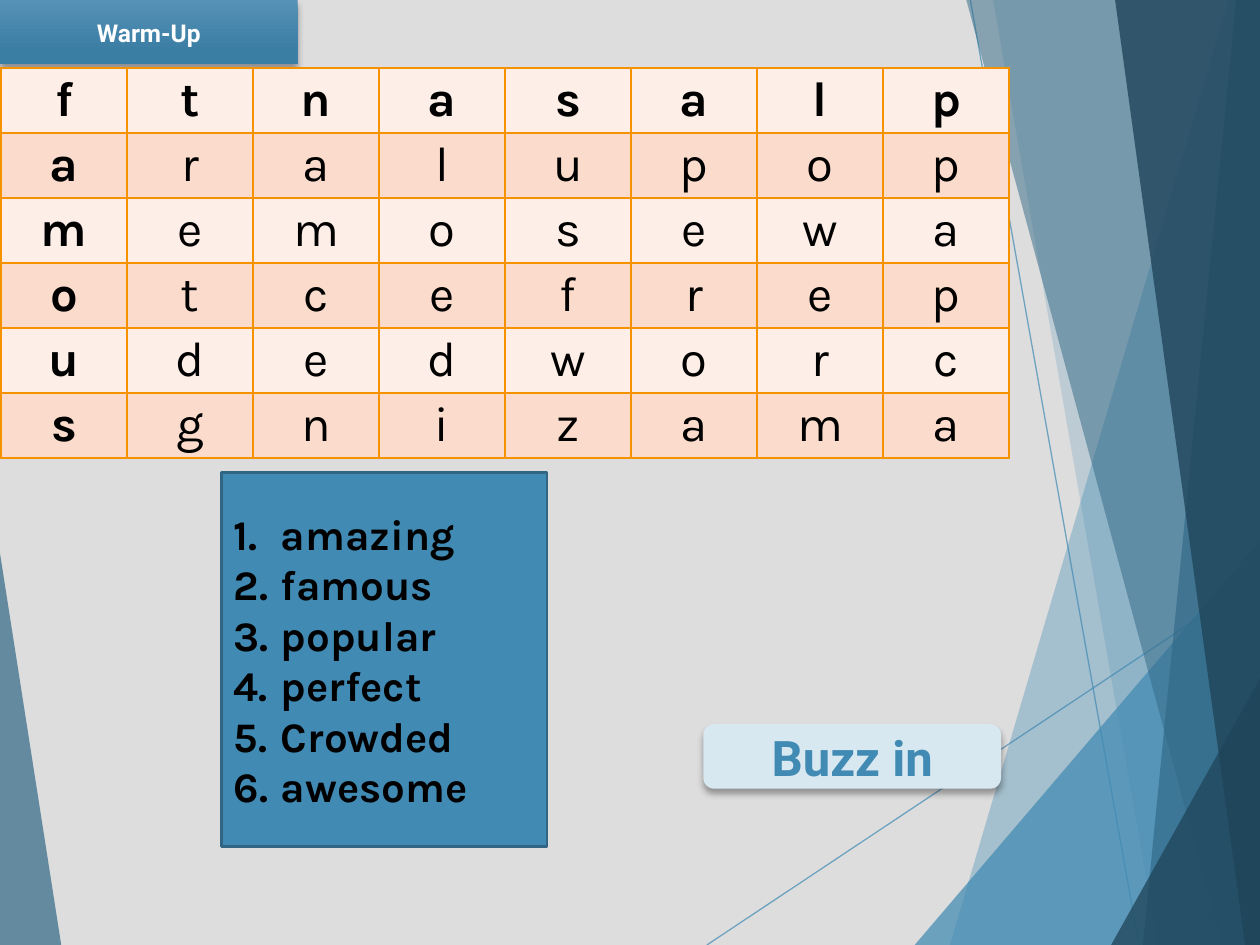
from lxml.etree import SubElement
from pptx import Presentation
from pptx.dml.color import RGBColor
from pptx.enum.shapes import MSO_CONNECTOR, MSO_SHAPE
from pptx.enum.text import MSO_ANCHOR, MSO_AUTO_SIZE, PP_ALIGN
from pptx.oxml import parse_xml
from pptx.oxml.ns import nsdecls, qn
from pptx.util import Cm, Pt

BLUE = RGBColor(0x41, 0x8A, 0xB3)
STEEL = RGBColor(0x31, 0x68, 0x86)
NAVY = RGBColor(0x20, 0x45, 0x5A)
BOX_LINE = RGBColor(0x30, 0x66, 0x84)
GRADIENT = [(0, RGBColor(0x56, 0x91, 0xB7)), (0.78, RGBColor(0x3B, 0x7E, 0xA4))]
PALE_BLUE = RGBColor(0xD8, 0xE8, 0xF1)
BANDS = [RGBColor(0xFD, 0xEE, 0xE7), RGBColor(0xFB, 0xDC, 0xCC)]
ORANGE = RGBColor(0xF6, 0x92, 0x00)
GREY = RGBColor(0xDD, 0xDD, 0xDD)
BLACK = RGBColor(0, 0, 0)
WHITE = RGBColor(0xFF, 0xFF, 0xFF)

RAYS = [(14.25, 19.05, 25.43, 11.61), (19.56, 0, 22.96, 19.05)]
FACETS = [
    (BLUE, 36, [(24.77, 0), (19.15, 19.05), (25.45, 19.08), (25.43, 0)]),
    (BLUE, 20, [(20.02, 0), (23.34, 19.05), (25.43, 19.05), (25.43, 0)]),
    (BLUE, 72, [(18.44, 19.05), (25.4, 10.9), (25.43, 19.05)]),
    (STEEL, 50, [(19.48, 0), (24.64, 19.05), (25.43, 19.05), (25.43, 0)]),
    (STEEL, 66, [(24.92, 0), (23.04, 19.05), (25.43, 19.05), (25.4, 0)]),
    (NAVY, 80, [(22.48, 0), (25.1, 19.05), (25.45, 19.05), (25.4, 0)]),
    (NAVY, 76, [(22.4, 19.05), (25.45, 13.59), (25.45, 19.05)]),
    (STEEL, 70, [(0, 11.15), (1.24, 19.08), (0, 19.05)]),
]
LETTERS = ["ftnasalp", "aralupop", "memosewa", "otcefrep", "udedworc", "sgnizama"]
WORDS = ["amazing", "famous", "popular", "perfect", "Crowded", "awesome"]


def set_all(obj, fmt):
    for name, value in fmt.items():
        setattr(obj, name, value)


def set_font(font, size, name, color, bold=True):
    set_all(font, {"size": Pt(size), "name": name, "bold": bold})
    font.color.rgb = color


def place(sp, left, top, width, height):
    set_all(sp, {"left": Cm(left), "top": Cm(top), "width": Cm(width), "height": Cm(height)})


def set_alpha(fmt_element, percent):
    for clr in fmt_element.iter(qn("a:srgbClr")):
        SubElement(clr, qn("a:alpha"), val=str(percent * 1000))


def add_ray(s, x1, y1, x2, y2):
    ray = s.shapes.add_connector(MSO_CONNECTOR.STRAIGHT, Cm(x1), Cm(y1), Cm(x2), Cm(y2))
    ray.line.width = Pt(0.75)
    ray.line.color.rgb = BLUE
    spPr = ray._element.spPr
    set_alpha(spPr, 70)
    SubElement(spPr, qn("a:effectLst"))


def add_facet(s, color, opacity, points):
    corners = [(Cm(x), Cm(y)) for x, y in points]
    builder = s.shapes.build_freeform(*corners[0])
    builder.add_line_segments(corners[1:], close=True)
    sp = builder.convert_to_shape()
    sp.shadow.inherit = False
    sp.fill.solid()
    sp.fill.fore_color.rgb = color
    sp.line.fill.background()
    set_alpha(sp._element.spPr, opacity)


def add_drop_shadow(sp):
    sp.shadow.inherit = False
    effects = sp._element.spPr.find(qn("a:effectLst"))
    effects.append(parse_xml(
        f'<a:outerShdw {nsdecls("a")} blurRad="{Pt(4)}" dist="{Pt(3)}" dir="5400000" '
        'rotWithShape="0"><a:srgbClr val="000000"><a:alpha val="35000"/></a:srgbClr></a:outerShdw>'))


def format_button(sp, text, size, color):
    sp.line.fill.background()
    add_drop_shadow(sp)
    tf = sp.text_frame
    set_all(tf, {"text": text, "vertical_anchor": MSO_ANCHOR.MIDDLE,
                 "auto_size": MSO_AUTO_SIZE.NONE, "word_wrap": True})
    p = tf.paragraphs[0]
    p.alignment = PP_ALIGN.CENTER
    set_font(p.runs[0].font, size, "Roboto", color)


def fill_title(s):
    sp = s.shapes.title
    place(sp, 0, 0, 6, 1.3)
    sp._element.spPr.insert(1, parse_xml(
        f'<a:prstGeom {nsdecls("a")} prst="roundRect"><a:avLst/></a:prstGeom>'))
    sp.fill.gradient()
    sp.fill.gradient_angle = 270
    for stop, (position, color) in zip(sp.fill.gradient_stops, GRADIENT):
        stop.position = position
        stop.color.rgb = color
    format_button(sp, "Warm-Up", 14, WHITE)


def add_buzzer(s):
    sp = s.shapes.add_shape(MSO_SHAPE.ROUNDED_RECTANGLE, Cm(14.18), Cm(14.6), Cm(6), Cm(1.3))
    sp.fill.solid()
    sp.fill.fore_color.rgb = PALE_BLUE
    format_button(sp, "Buzz in", 28, BLUE)


def set_borders(cell):
    tcPr = cell._tc.get_or_add_tcPr()
    for side in ("lnL", "lnR", "lnT", "lnB"):
        tcPr.append(parse_xml(
            f'<a:{side} {nsdecls("a")} w="{Pt(1)}"><a:solidFill>'
            f'<a:srgbClr val="{ORANGE}"/></a:solidFill></a:{side}>'))


def add_letter_grid(s):
    rows, cols = len(LETTERS), len(LETTERS[0])
    table = s.shapes.add_table(rows, cols, Cm(0.02), Cm(1.37),
                               Cm(2.54 * cols), Cm(1.31 * rows)).table
    for i, word in enumerate(LETTERS):
        for j, letter in enumerate(word):
            cell = table.cell(i, j)
            set_all(cell, {"text": letter, "margin_left": Cm(0.18), "margin_right": Cm(0.18),
                           "margin_top": 0, "margin_bottom": 0})
            set_borders(cell)
            cell.fill.solid()
            cell.fill.fore_color.rgb = BANDS[i % 2]
            p = cell.text_frame.paragraphs[0]
            set_all(p, {"alignment": PP_ALIGN.CENTER, "line_spacing": 1.07})
            set_font(p.runs[0].font, 28, "Karla", BLACK, i == 0 or j == 0)


def fill_word_list(s):
    sp = s.placeholders[1]
    place(sp, 4.46, 9.53, 6.57, 7.54)
    sp.fill.solid()
    sp.fill.fore_color.rgb = BLUE
    sp.line.width = Pt(1.5)
    sp.line.color.rgb = BOX_LINE
    tf = sp.text_frame
    set_all(tf, {"text": "\n".join(WORDS), "vertical_anchor": MSO_ANCHOR.MIDDLE,
                 "auto_size": MSO_AUTO_SIZE.NONE})
    for p in tf.paragraphs:
        pPr = p._p.get_or_add_pPr()
        pPr.set("marL", str(Cm(0.95)))
        pPr.set("indent", str(-Cm(0.95)))
        SubElement(pPr, qn("a:buFont"), typeface="+mj-lt")
        SubElement(pPr, qn("a:buAutoNum"), type="arabicPeriod")
        set_all(p, {"space_before": Pt(0), "alignment": PP_ALIGN.LEFT})
        set_font(p.runs[0].font, 24, "Karla", BLACK)


def main():
    prs = Presentation()
    set_all(prs, {"slide_width": Cm(25.4), "slide_height": Cm(19.05)})
    s = prs.slides.add_slide(prs.slide_layouts[1])
    s.background.fill.solid()
    s.background.fill.fore_color.rgb = GREY
    for ray in RAYS:
        add_ray(s, *ray)
    for facet in FACETS:
        add_facet(s, *facet)
    fill_title(s)
    add_buzzer(s)
    add_letter_grid(s)
    fill_word_list(s)
    prs.save("out.pptx")


if __name__ == "__main__":
    main()
